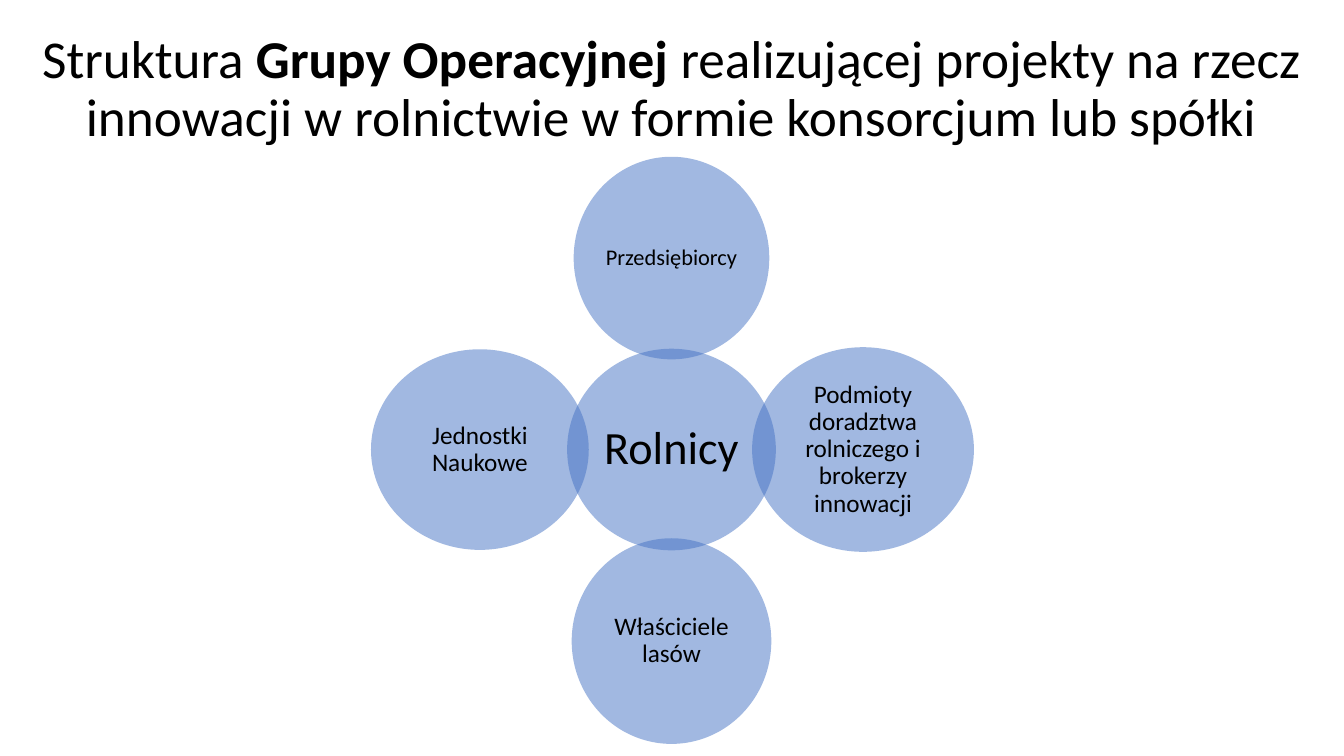
from lxml import etree
from pptx import Presentation
from pptx.dml.color import RGBColor
from pptx.enum.shapes import MSO_SHAPE
from pptx.enum.text import MSO_ANCHOR, PP_ALIGN
from pptx.oxml.ns import qn
from pptx.util import Inches, Pt

ELLIPSE = MSO_SHAPE.OVAL
MIDDLE = MSO_ANCHOR.MIDDLE
CENTER = PP_ALIGN.CENTER

# Content
TITLE = [
    ("Struktura ", False),
    ("Grupy Operacyjnej ", True),
    ("realizującej projekty na rzecz innowacji w rolnictwie w formie konsorcjum lub spółki", False),
]
TITLE_BOX = (0.26, 0.17, 12.8, 1.45)

# Members: text, type size, direction from the centre (x, y), width, height, inset
MEMBERS = [
    ("Rolnicy", "core", (0, 0), (2.07, 2.0), 0.05),
    ("Przedsiębiorcy", "small", (0, -1), (1.94, 2.01), 0.02),
    ("Podmioty doradztwa rolniczego i brokerzy innowacji", "member", (1, 0), (2.2, 2.03), 0.03),
    ("Właściciele lasów", "member", (0, 1), (1.98, 2.04), 0.03),
    ("Jednostki Naukowe", "member", (-1, 0), (2.16, 1.99), 0.03),
]
CENTRE = (6.66, 4.46)
RADIUS = 1.9

THEME = {
    "font": "Calibri",
    "text": RGBColor(0x00, 0x00, 0x00),
    "circle": RGBColor(0x44, 0x72, 0xC4),
    "alpha": 50,
    "sizes": {"title": 38, "core": 33, "member": 18, "small": 16},
}


def write(shape, runs, size, inset=None):
    """Fill a shape with one centred paragraph of (text, bold) runs."""
    tf = shape.text_frame
    frame = {"word_wrap": True, "vertical_anchor": MIDDLE}
    if inset is not None:
        for side in ("left", "right", "top", "bottom"):
            frame[f"margin_{side}"] = Inches(inset)
    for name, value in frame.items():
        setattr(tf, name, value)
    p = tf.paragraphs[0]
    p.alignment = CENTER
    p.line_spacing = 0.9
    for text, bold in runs:
        r = p.add_run()
        r.text = text
        font = {"name": THEME["font"], "size": Pt(THEME["sizes"][size]), "bold": bold}
        for name, value in font.items():
            setattr(r.font, name, value)
        r.font.color.rgb = THEME["text"]


def add_circle(slide, box):
    sp = slide.shapes.add_shape(ELLIPSE, *map(Inches, box))
    sp.shadow.inherit = False
    sp.line.fill.background()
    sp.fill.solid()
    sp.fill.fore_color.rgb = THEME["circle"]
    color = sp.fill._xPr.find(qn("a:solidFill"))[0]
    etree.SubElement(color, qn("a:alpha"), val=str(THEME["alpha"] * 1000))
    return sp


prs = Presentation()
prs.slide_width, prs.slide_height = Inches(13.33), Inches(7.5)
s = prs.slides.add_slide(prs.slide_layouts[6])

# Title
write(s.shapes.add_textbox(*map(Inches, TITLE_BOX)), TITLE, "title")

# Overlapping circles around the centre
for text, size, (dx, dy), (w, h), inset in MEMBERS:
    left = CENTRE[0] + dx * RADIUS - w / 2
    top = CENTRE[1] + dy * RADIUS - h / 2
    write(add_circle(s, (left, top, w, h)), [(text, False)], size, inset)

prs.save("out.pptx")
